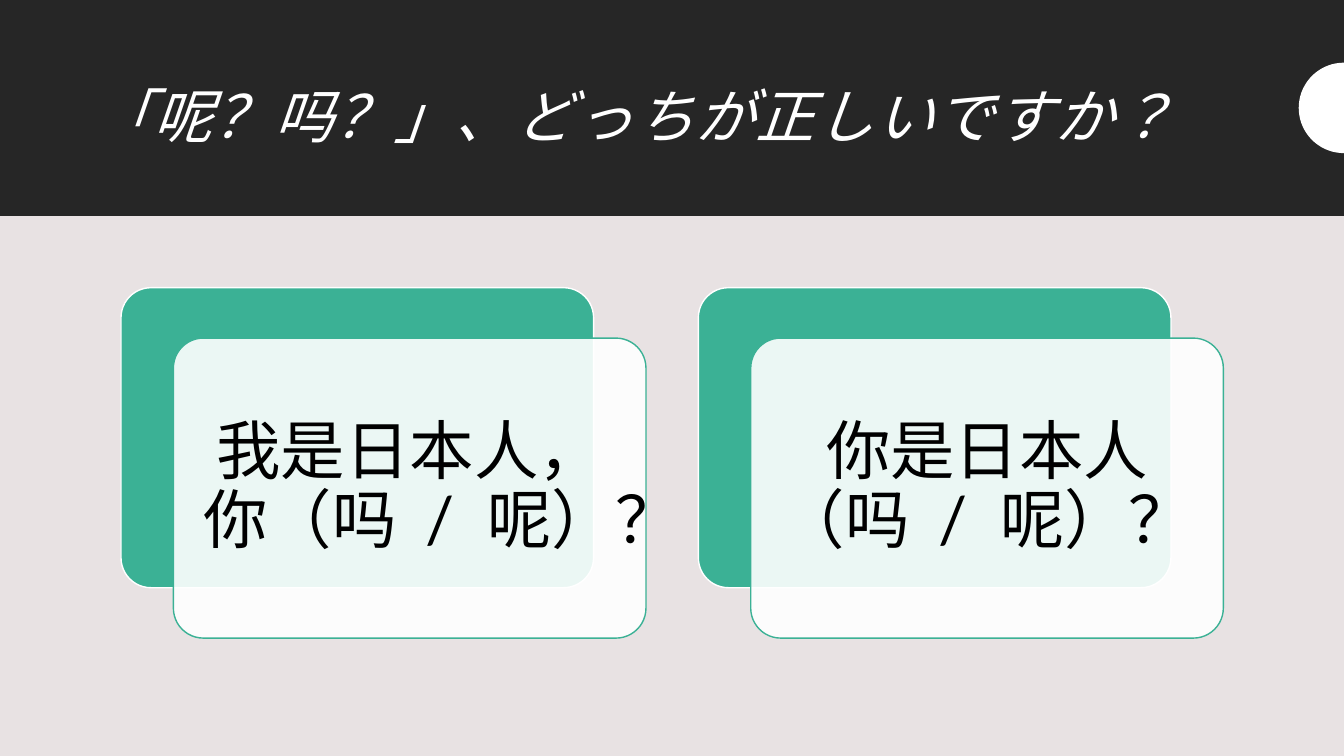
from dataclasses import dataclass
from math import cos, pi, sin

from lxml.etree import SubElement
from pptx import Presentation
from pptx.dml.color import RGBColor
from pptx.enum.lang import MSO_LANGUAGE_ID
from pptx.enum.shapes import MSO_SHAPE
from pptx.enum.text import MSO_ANCHOR, PP_ALIGN
from pptx.oxml.ns import qn
from pptx.util import Cm, Pt


@dataclass(frozen=True)
class Theme:
    background: RGBColor = RGBColor(0xE8, 0xE2, 0xE3)
    band: RGBColor = RGBColor(0x26, 0x26, 0x26)
    accent: RGBColor = RGBColor(0x3B, 0xB1, 0x95)
    white: RGBColor = RGBColor(0xFF, 0xFF, 0xFF)
    black: RGBColor = RGBColor(0x00, 0x00, 0x00)
    title_font: str = "Roboto"
    body_font: str = "Lato"
    title_size: Pt = Pt(42)
    body_size: Pt = Pt(46)
    line_width: Pt = Pt(1)


THEME = Theme()
CHINESE = MSO_LANGUAGE_ID.SIMPLIFIED_CHINESE
JAPANESE = MSO_LANGUAGE_ID.JAPANESE
TITLE = [
    ("「", JAPANESE),
    ("呢？吗？", CHINESE),
    ("」、どっちが正しいですか？", JAPANESE),
]
QUESTIONS = ["我是日本人，你（吗  /  呢）？", "你是日本人（吗  /  呢）？"]


def paint(sp, fill, line=None, opacity=None):
    sp.shadow.inherit = False
    sp.fill.solid()
    sp.fill.fore_color.rgb = fill
    if opacity is not None:
        color = sp.fill._xPr.find(qn("a:solidFill"))[0]
        SubElement(color, qn("a:alpha")).set("val", str(opacity * 1000))
    if line is None:
        sp.line.fill.background()
    else:
        sp.line.color.rgb = line
        sp.line.width = THEME.line_width


def add_text(s, box, parts, font, size, color, margin=None, italic=None):
    sp = s.shapes.add_textbox(*box)
    tf = sp.text_frame
    tf.word_wrap = True
    tf.vertical_anchor = MSO_ANCHOR.MIDDLE
    if margin is not None:
        tf.margin_left = tf.margin_right = margin
        tf.margin_top = tf.margin_bottom = margin
    p = tf.paragraphs[0]
    p.line_spacing = 0.9
    for text, language in parts:
        r = p.add_run()
        r.text = text
        r.font.name = font
        r.font.size = size
        r.font.color.rgb = color
        r.font.italic = italic
        r.font.language_id = language
    return p


def add_half_disc(s, right, top, diameter, steps=36):
    radius = diameter / 2
    points = [
        (right - radius * sin(pi * i / steps), top + radius * (1 - cos(pi * i / steps)))
        for i in range(steps + 1)
    ]
    builder = s.shapes.build_freeform(*points[0])
    builder.add_line_segments(points[1:], close=True)
    paint(builder.convert_to_shape(), THEME.white)


def add_header(s, left, top, width, height):
    band = s.shapes.add_shape(MSO_SHAPE.RECTANGLE, left, top, width, height)
    paint(band, THEME.band)
    box = (left + Cm(2.11), top + Cm(1.17), width - Cm(4.22), Cm(3.68))
    p = add_text(s, box, TITLE, THEME.title_font, THEME.title_size, THEME.white, italic=True)
    p.space_after = Pt(6)
    for r in p.runs:
        r.font._element.set("spc", "100")
    add_half_disc(s, left + width, top + Cm(1.58), Cm(2.28))


def add_card(s, left, top, width, height, question):
    shift_x, shift_y, inset = Cm(1.32), Cm(1.27), Cm(0.22)
    card_w, card_h = width - shift_x, height - shift_y
    layers = [
        (0, 0, THEME.accent, THEME.white, None),
        (shift_x, shift_y, THEME.white, THEME.accent, 90),
    ]
    for dx, dy, fill, line, opacity in layers:
        sp = s.shapes.add_shape(
            MSO_SHAPE.ROUNDED_RECTANGLE, left + dx, top + dy, card_w, card_h
        )
        sp.adjustments[0] = 0.1
        paint(sp, fill, line, opacity)
    box = (
        left + shift_x + inset,
        top + shift_y + inset,
        card_w - 2 * inset,
        card_h - 2 * inset,
    )
    p = add_text(
        s, box, [(question, CHINESE)], THEME.body_font, THEME.body_size,
        THEME.black, margin=Cm(0.48),
    )
    p.alignment = PP_ALIGN.CENTER


def add_cards(s, left, top, width, height, gap):
    card_w = (width - gap * (len(QUESTIONS) - 1)) // len(QUESTIONS)
    for i, question in enumerate(QUESTIONS):
        add_card(s, left + i * (card_w + gap), top, card_w, height, question)


def main():
    prs = Presentation()
    prs.slide_width, prs.slide_height = Cm(33.87), Cm(19.05)
    s = prs.slides.add_slide(prs.slide_layouts[6])
    s.background.fill.solid()
    s.background.fill.fore_color.rgb = THEME.background
    add_header(s, 0, 0, prs.slide_width, Cm(5.44))
    add_cards(s, Cm(3.05), Cm(7.25), Cm(27.78), Cm(8.83), Cm(1.32))
    prs.save("out.pptx")


if __name__ == "__main__":
    main()
